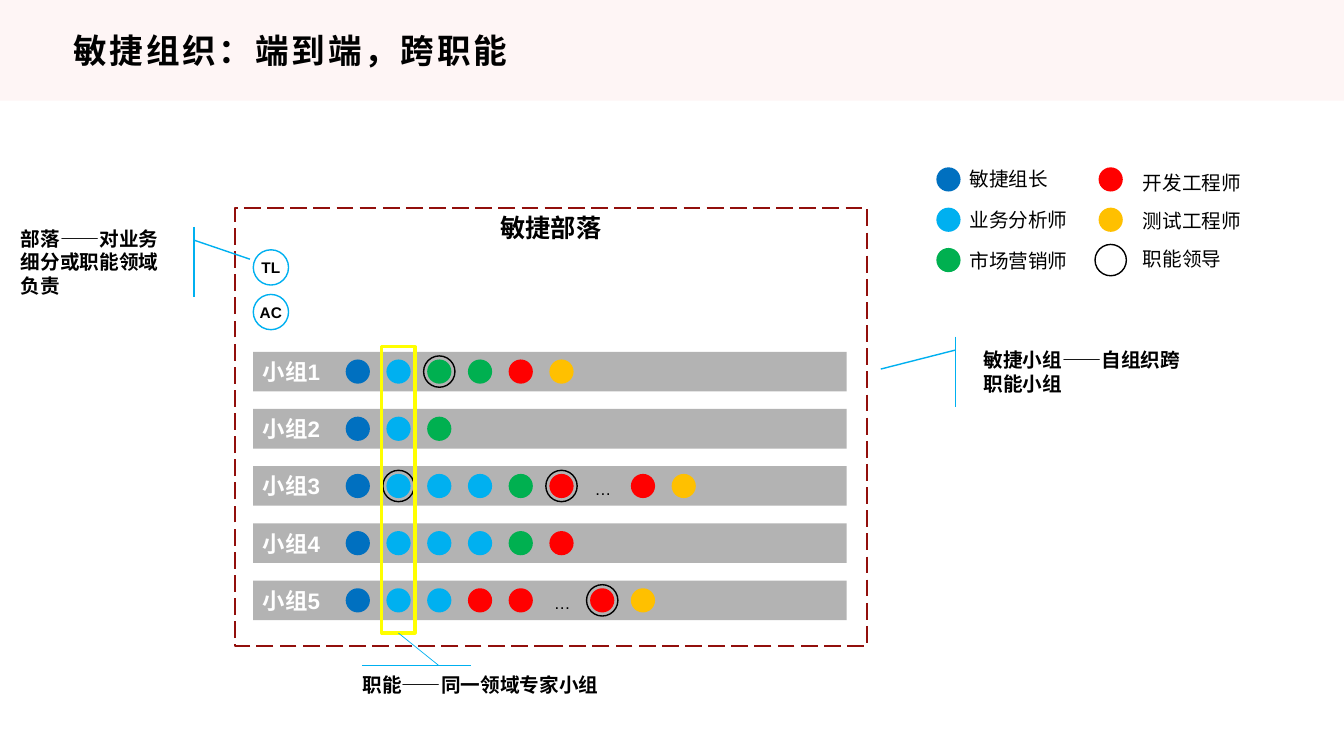
from dataclasses import dataclass
from typing import Optional

from pptx import Presentation
from pptx.dml.color import RGBColor
from pptx.enum.dml import MSO_LINE
from pptx.enum.shapes import MSO_CONNECTOR, MSO_SHAPE
from pptx.enum.text import MSO_ANCHOR, PP_ALIGN
from pptx.oxml.ns import qn
from pptx.shapes.autoshape import Shape
from pptx.shapes.connector import Connector
from pptx.util import Pt


@dataclass(frozen=True)
class Theme:
    latin: str = "Arial"
    east_asian: str = "Noto Sans CJK JP"
    header: str = "FEF5F5"
    ink: str = "000000"
    white: str = "FFFFFF"
    band: str = "B3B3B3"
    tribe: str = "920F0C"
    accent: str = "00B0F0"
    highlight: str = "FFFF00"
    title_size: float = 24
    tribe_size: float = 18
    team_size: float = 16
    body_size: float = 14
    ellipsis_size: float = 12
    badge_size: float = 11


@dataclass(frozen=True)
class Box:
    left: float
    top: float
    width: float
    height: float


@dataclass(frozen=True)
class Team:
    members: str
    leads: tuple[int, ...] = ()


@dataclass(frozen=True)
class Callout:
    text: str
    box: Box
    flipped: bool


@dataclass(frozen=True)
class LegendColumn:
    centre: float
    label_left: float
    label_top: float
    label_pitch: float
    entries: tuple[tuple[str, str], ...]


THEME = Theme()
ROLE_COLOURS = {"L": "0070C0", "B": "00B0F0", "M": "00B050", "D": "FF0000", "T": "FFC000"}
LEAD = "O"
DOT, RING, BADGE = 17.3, 22.4, 25.2
FIRST_MEMBER, MEMBER_PITCH = 255.6, 29.1
FIRST_BAND, BAND_PITCH, BAND_HEIGHT = 251.3, 40.85, 28.3
FIRST_SWATCH, SWATCH_PITCH = 128.2, 28.8

TEAMS = [
    Team("LBMMDT", (2,)),
    Team("LBM"),
    Team("LBBBMD…DT", (1, 5)),
    Team("LBBBMD"),
    Team("LBBDD…DT", (6,)),
]
CALLOUTS = [
    Callout("部落——对业务细分或职能领域负责", Box(7.9, 162, 121, 50.4), True),
    Callout("敏捷小组——自组织跨职能小组", Box(695.5, 240.5, 162, 50.4), False),
]
LEGEND = [
    LegendColumn(677.5, 685.4, 115.9, 29.1,
                 (("L", "敏捷组长"), ("B", "业务分析师"), ("M", "市场营销师"))),
    LegendColumn(793.4, 809.3, 118.8, 27,
                 (("D", "开发工程师"), ("T", "测试工程师"), (LEAD, "职能领导"))),
]

presentation = Presentation()
presentation.slide_width, presentation.slide_height = Pt(960), Pt(540)
slide = presentation.slides.add_slide(presentation.slide_layouts[6])


def write(shape: Shape, text: str, size: float, colour: str = THEME.ink, bold: bool = False,
          align: PP_ALIGN = PP_ALIGN.LEFT, anchor: MSO_ANCHOR = MSO_ANCHOR.TOP,
          latin: str = THEME.latin, spacing: float = 0) -> None:
    frame = shape.text_frame
    frame.word_wrap = True
    frame.vertical_anchor = anchor
    paragraph = frame.paragraphs[0]
    paragraph.alignment = align
    run = paragraph.add_run()
    run.text = text
    run.font.name, run.font.size, run.font.bold = latin, Pt(size), bold
    run.font.color.rgb = RGBColor.from_string(colour)
    properties = run.font._element
    east_asian = properties.makeelement(qn("a:ea"), {"typeface": THEME.east_asian})
    properties.find(qn("a:latin")).addnext(east_asian)
    if spacing:
        properties.set("spc", str(round(spacing * 100)))


def add_preset(kind: MSO_SHAPE, box: Box, fill: Optional[str] = None,
               line: Optional[str] = None, weight: float = 1) -> Shape:
    shape = slide.shapes.add_shape(kind, Pt(box.left), Pt(box.top), Pt(box.width), Pt(box.height))
    shape.shadow.inherit = False
    if fill:
        shape.fill.solid()
        shape.fill.fore_color.rgb = RGBColor.from_string(fill)
    else:
        shape.fill.background()
    if line:
        shape.line.color.rgb = RGBColor.from_string(line)
        shape.line.width = Pt(weight)
    else:
        shape.line.fill.background()
    return shape


def add_circle(x: float, y: float, diameter: float, fill: Optional[str] = None,
               line: Optional[str] = None) -> Shape:
    box = Box(x - diameter / 2, y - diameter / 2, diameter, diameter)
    return add_preset(MSO_SHAPE.OVAL, box, fill, line)


def add_label(box: Box) -> Shape:
    return slide.shapes.add_textbox(Pt(box.left), Pt(box.top), Pt(box.width), Pt(box.height))


def add_line(x1: float, y1: float, x2: float, y2: float) -> Connector:
    line = slide.shapes.add_connector(MSO_CONNECTOR.STRAIGHT, Pt(x1), Pt(y1), Pt(x2), Pt(y2))
    line.line.color.rgb = RGBColor.from_string(THEME.accent)
    line.line.width = Pt(0.5)
    properties = line._element.spPr
    properties.append(properties.makeelement(qn("a:effectLst"), {}))
    return line


def add_team(index: int, team: Team) -> None:
    top = FIRST_BAND + index * BAND_PITCH
    middle = top + BAND_HEIGHT / 2
    band = add_preset(MSO_SHAPE.RECTANGLE, Box(180.8, top, 424, BAND_HEIGHT), THEME.band)
    write(band, f"小组{index + 1}", THEME.team_size, THEME.white, True, anchor=MSO_ANCHOR.MIDDLE)
    for column, role in enumerate(team.members):
        x = FIRST_MEMBER + column * MEMBER_PITCH
        if role == "…":
            write(add_label(Box(x - 12.6, middle - 9, 25.2, 21.6)), role, THEME.ellipsis_size,
                  align=PP_ALIGN.CENTER, anchor=MSO_ANCHOR.MIDDLE)
        else:
            add_circle(x, middle, DOT, ROLE_COLOURS[role])
        if column in team.leads:
            add_circle(x, middle, RING, line=THEME.ink)


def add_callout(callout: Callout) -> None:
    shape = add_preset(MSO_SHAPE.LINE_CALLOUT_1_ACCENT_BAR, callout.box, line=THEME.accent)
    for position, value in enumerate((0.19, -0.08, 0.46, -0.41)):
        shape.adjustments[position] = value
    if callout.flipped:
        shape._element.spPr.xfrm.set("flipH", "1")
    write(shape, callout.text, THEME.body_size, bold=True, anchor=MSO_ANCHOR.MIDDLE)


def add_legend(column: LegendColumn) -> None:
    for row, (role, text) in enumerate(column.entries):
        y = FIRST_SWATCH + row * SWATCH_PITCH
        if role == LEAD:
            add_circle(column.centre, y, RING, line=THEME.ink)
        else:
            add_circle(column.centre, y, DOT, ROLE_COLOURS[role])
        top = column.label_top + row * column.label_pitch
        write(add_label(Box(column.label_left, top, 87, 24.2)), text, THEME.body_size)


def main() -> None:
    add_preset(MSO_SHAPE.RECTANGLE, Box(0, 0, 960, 72), THEME.header)
    write(add_label(Box(45.4, 18.7, 869, 34.6)), "敏捷组织：端到端，跨职能", THEME.title_size,
          bold=True, anchor=MSO_ANCHOR.MIDDLE, latin=THEME.east_asian, spacing=2)
    tribe = add_preset(MSO_SHAPE.RECTANGLE, Box(167.8, 148.3, 451.4, 313.2),
                       line=THEME.tribe, weight=1.5)
    tribe.line.dash_style = MSO_LINE.LONG_DASH
    write(tribe, "敏捷部落", THEME.tribe_size, bold=True, align=PP_ALIGN.CENTER)
    for row, initials in enumerate(("TL", "AC")):
        badge = add_circle(193.5, 191 + row * 31.9, BADGE, line=THEME.accent)
        write(badge, initials, THEME.badge_size, bold=True, align=PP_ALIGN.CENTER,
              anchor=MSO_ANCHOR.MIDDLE)
        frame = badge.text_frame
        frame.word_wrap = False
        frame.margin_left = frame.margin_right = frame.margin_top = frame.margin_bottom = 0
    for index, team in enumerate(TEAMS):
        add_team(index, team)
    for callout in CALLOUTS:
        add_callout(callout)
    function = add_preset(MSO_SHAPE.RECTANGLE, Box(272.7, 247.7, 23.8, 204.5),
                          line=THEME.highlight, weight=2.25)
    add_line(258.5, 475.2, 336.2, 475.2)
    add_line(313.2, 475.2, 284.6, 452.2).end_connect(function, 2)
    write(add_label(Box(252, 477.4, 186.5, 24.2)), "职能——同一领域专家小组", THEME.body_size, bold=True)
    for column in LEGEND:
        add_legend(column)
    presentation.save("out.pptx")


if __name__ == "__main__":
    main()
